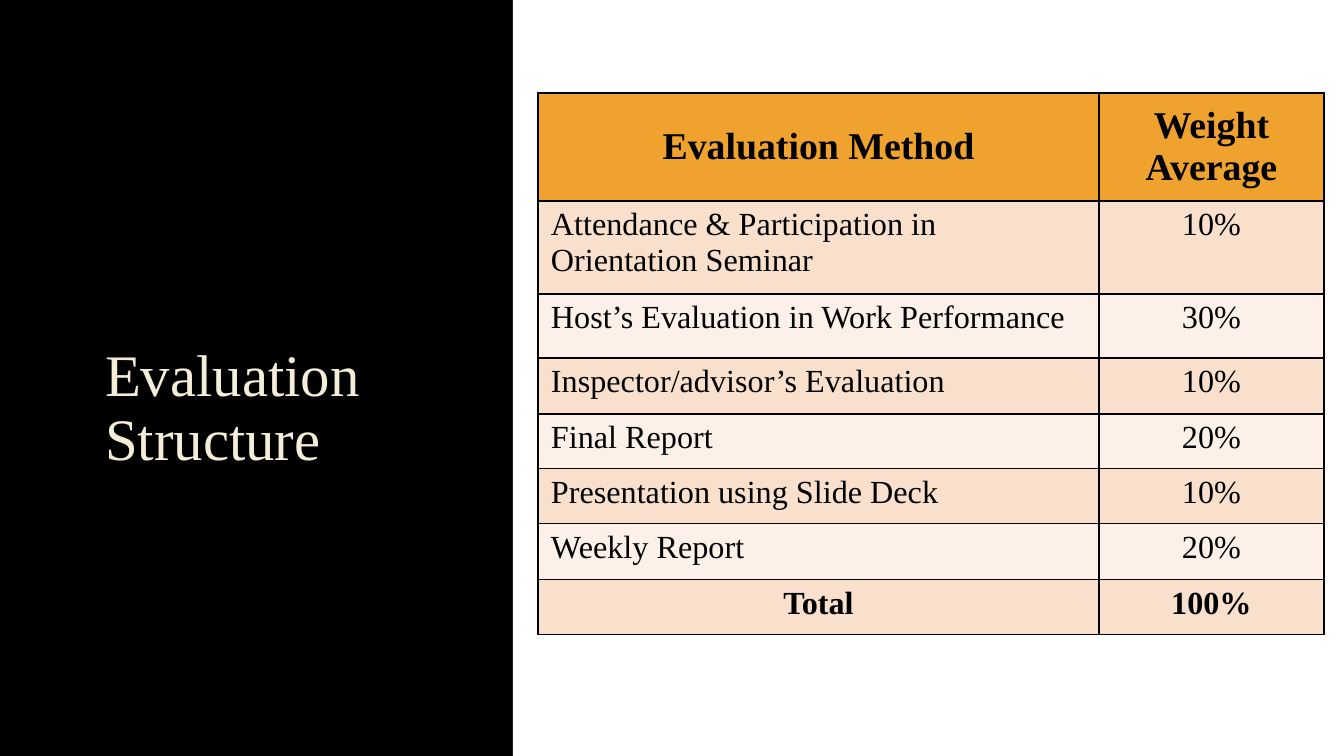
from lxml import etree
from pptx import Presentation
from pptx import util as u
from pptx.dml.color import RGBColor
from pptx.enum import text
from pptx.oxml import parse_xml
from pptx.oxml.ns import nsdecls
from pptx.enum import shapes

THEME = {
    "font": "Times New Roman",
    "backdrop": "000000", "panel": "FFFFFF", "title": "F4EDD8", "ink": "000000",
    "header": "F0A22E", "bands": ("F9E0CD", "FCF0E8"), "outline": "404040",
    "title_size": 42, "header_size": 27, "body_size": 23,
}
PX = 914400 / 100.8  # EMU in one px


def px(*lengths):
    return [u.Emu(round(length * PX)) for length in lengths]


def write(frame, words, size, color, bold=False, align=text.PP_ALIGN.LEFT, spacing=None):
    paragraph = frame.paragraphs[0]
    paragraph.alignment = align
    paragraph.line_spacing = spacing
    run = paragraph.add_run()
    run.text = words
    run.font.name = THEME["font"]
    run.font.size = u.Pt(size)
    run.font.bold = bold
    run.font.color.rgb = RGBColor.from_string(color)
    return run


# Slide and backdrop
deck = Presentation()
deck.slide_width, deck.slide_height = px(1344, 756)
slide = deck.slides.add_slide(deck.slide_layouts[5])
slide.background.fill.solid()
slide.background.fill.fore_color.rgb = RGBColor.from_string(THEME["backdrop"])

# Title
title = slide.shapes.title
title.left, title.top, title.width, title.height = px(95, 92, 373, 386)
title.text_frame.word_wrap = True
title.text_frame.auto_size = text.MSO_AUTO_SIZE.NONE
title.text_frame.vertical_anchor = text.MSO_ANCHOR.BOTTOM
heading = write(title.text_frame, "Evaluation Structure", THEME["title_size"],
                THEME["title"], spacing=0.9)
heading.font.fill._xPr.insert(0, parse_xml(
    f'<a:ln {nsdecls("a")} w="9525"><a:solidFill><a:srgbClr val="{THEME["outline"]}">'
    '<a:alpha val="10000"/></a:srgbClr></a:solidFill></a:ln>'))

# White panel
panel = slide.shapes.add_shape(shapes.MSO_SHAPE.RECTANGLE, *px(513, 0, 831, 756))
panel.shadow.inherit = False
panel.fill.solid()
panel.fill.fore_color.rgb = RGBColor.from_string(THEME["panel"])
panel.line.fill.background()

# Evaluation table
weights = [
    ("Evaluation Method", "Weight Average"),
    ("Attendance & Participation in Orientation Seminar", "10%"),
    ("Host’s Evaluation in Work Performance", "30%"),
    ("Inspector/advisor’s Evaluation", "10%"),
    ("Final Report", "20%"),
    ("Presentation using Slide Deck", "10%"),
    ("Weekly Report", "20%"),
    ("Total", "100%"),
]
row_heights = px(108, 93, 64, 56, 55, 55, 56, 55)
column_widths = px(561, 225)
evaluation = slide.shapes.add_table(
    len(weights), 2, *px(538, 93), sum(column_widths), sum(row_heights)).table
for column, width in zip(evaluation.columns, column_widths):
    column.width = width

for r, (entries, height) in enumerate(zip(weights, row_heights)):
    evaluation.rows[r].height = height
    is_header = r == 0
    is_strong = is_header or r == len(weights) - 1
    for c, words in enumerate(entries):
        cell = evaluation.cell(r, c)
        cell.margin_left, cell.margin_right, cell.margin_top, cell.margin_bottom = px(13, 13, 6, 6)
        cell.vertical_anchor = text.MSO_ANCHOR.MIDDLE if is_header else text.MSO_ANCHOR.TOP
        write(cell.text_frame, words,
              THEME["header_size" if is_header else "body_size"], THEME["ink"], bold=is_strong,
              align=text.PP_ALIGN.CENTER if is_strong or c else text.PP_ALIGN.LEFT)
        # Borders come before the fill in the cell properties
        properties = cell._tc.get_or_add_tcPr()
        for side in ("lnL", "lnR", "lnT", "lnB"):
            properties.append(parse_xml(
                f'<a:{side} {nsdecls("a")} w="12700"><a:solidFill>'
                f'<a:srgbClr val="{THEME["ink"]}"/></a:solidFill></a:{side}>'))
        cell.fill.solid()
        band = THEME["header"] if is_header else THEME["bands"][(r - 1) % 2]
        cell.fill.fore_color.rgb = RGBColor.from_string(band)

deck.save("out.pptx")
